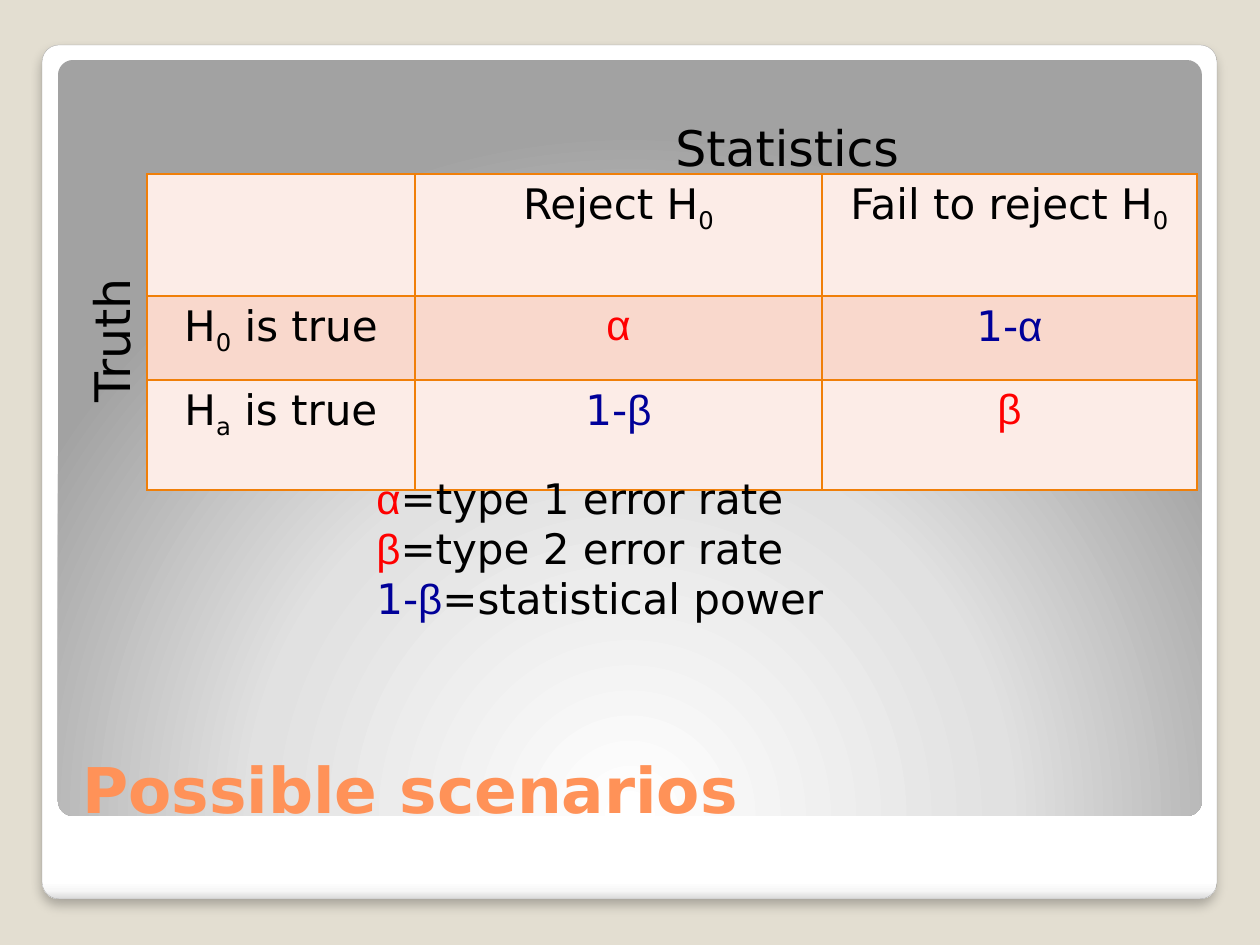
from lxml.etree import SubElement
from pptx import Presentation
from pptx.dml.color import RGBColor
from pptx.enum.shapes import MSO_SHAPE
from pptx.enum.text import MSO_ANCHOR, PP_ALIGN
from pptx.oxml.ns import qn
from pptx.util import Emu, Pt

SANS, GREEK = "DejaVu Sans", "Arial"
BLACK, RED, BLUE = "000000", "FF0000", "000099"
ORANGE, CORAL = "F07F09", "FF9258"
PALE, ROSE = "FCECE7", "F9D8CC"


def px(n):
    return Emu(round(n * 914400 / 126))


def color(code):
    return RGBColor.from_string(code)


def node(up, tag, **attrs):
    item = SubElement(up, qn(tag))
    for name, value in attrs.items():
        item.set(name, str(value))
    return item


def write(para, text, size=24, ink=BLACK, font=SANS, bold=False, sub=False):
    run = para.add_run()
    run.text = text
    face = run.font
    face.size, face.name, face.bold = Pt(size), font, bold
    face.color.rgb = color(ink)
    if sub:
        run._r.get_or_add_rPr().set("baseline", "-25000")


def fill_in(para, parts):
    for text, style in parts:
        write(para, text, **style)


class Deck:
    """Holds the slide and draws each kind of element on it."""

    def __init__(self, back):
        self.file = Presentation()
        self.file.slide_width, self.file.slide_height = px(1260), px(945)
        self.slide = self.file.slides.add_slide(self.file.slide_layouts[6])
        fill = self.slide.background.fill
        fill.solid()
        fill.fore_color.rgb = color(back)

    def panel(self, x, y, w, h, stops, line=None, round_in=False):
        shape = self.slide.shapes.add_shape(
            MSO_SHAPE.ROUNDED_RECTANGLE, px(x), px(y), px(w), px(h))
        shape.adjustments[0] = 0.02
        shape.shadow.inherit = False
        if line:
            shape.line.color.rgb = color(line)
            shape.line.width = Pt(0.16)
        else:
            shape.line.fill.background()
        props = shape._element.spPr
        grad = node(props, "a:gradFill", rotWithShape=1)
        props.insert(2, grad)
        group = node(grad, "a:gsLst")
        for spot, code in stops:
            stop = node(group, "a:gs", pos=spot * 1000)
            node(stop, "a:srgbClr", val=code)
        if round_in:
            way = node(grad, "a:path", path="circle")
            node(way, "a:fillToRect", l=50000, t=175000, r=50000, b=-75000)
        else:
            node(grad, "a:lin", ang=5400000, scaled=0)
        return shape

    def shade(self, shape):
        glow = shape._element.spPr.find(qn("a:effectLst"))
        cast = node(glow, "a:outerShdw", blurRad=Pt(6), dist=Pt(4),
                    dir=5400000, algn="t", rotWithShape=0)
        node(node(cast, "a:srgbClr", val=BLACK), "a:alpha", val=25000)

    def label(self, x, y, w, h, lines, turn=0, anchor=MSO_ANCHOR.TOP):
        box = self.slide.shapes.add_textbox(px(x), px(y), px(w), px(h))
        box.rotation = turn
        frame = box.text_frame
        frame.word_wrap = True
        frame.vertical_anchor = anchor
        for i, parts in enumerate(lines):
            para = frame.add_paragraph() if i else frame.paragraphs[0]
            fill_in(para, parts)

    def table(self, x, y, cols, rows, cells):
        grid = self.slide.shapes.add_table(
            len(rows), len(cols), px(x), px(y),
            px(sum(cols)), px(sum(rows))).table
        for col, w in zip(grid.columns, cols):
            col.width = px(w)
        for row, h in zip(grid.rows, rows):
            row.height = px(h)
        for r, line in enumerate(cells):
            for c, parts in enumerate(line):
                cell = grid.cell(r, c)
                self.border(cell)
                cell.fill.solid()
                cell.fill.fore_color.rgb = color(ROSE if r % 2 else PALE)
                para = cell.text_frame.paragraphs[0]
                para.alignment = PP_ALIGN.CENTER
                fill_in(para, parts)

    def border(self, cell):
        props = cell._tc.get_or_add_tcPr()
        for side in "LRTB":
            edge = node(props, "a:ln" + side, w=Pt(1))
            node(node(edge, "a:solidFill"), "a:srgbClr", val=ORANGE)


def main():
    deck = Deck("E3DED1")
    card = deck.panel(42, 45, 1175, 854, line="A4A4A4", stops=[
        (0, "FFFFFF"), (98, "FFFFFF"), (99, "F7F7F7"), (100, "DADADA")])
    deck.shade(card)
    deck.panel(58, 60, 1144, 756, round_in=True, stops=[
        (0, "FFFFFF"), (55, "E1E1E1"), (100, "A2A2A2")])

    title = dict(size=36, ink=CORAL, bold=True)
    deck.label(70, 687, 1127, 145, [[("Possible scenarios", title)]],
               anchor=MSO_ANCHOR.BOTTOM)

    plain, sub, head = {}, dict(sub=True), dict(size=28)
    alpha = ("α", dict(ink=RED, font=GREEK))
    beta = ("β", dict(ink=RED, font=GREEK))
    minus = ("1-", dict(ink=BLUE))
    right = [minus, ("α", dict(ink=BLUE, font=GREEK))]
    power = [minus, ("β", dict(ink=BLUE, font=GREEK))]
    zero, true = ("0", sub), (" is true", plain)
    deck.table(147, 174, [268, 407, 375], [122, 84, 110], [
        [[], [("Reject H", plain), zero], [("Fail to reject H", plain), zero]],
        [[("H", plain), zero, true], [alpha], right],
        [[("H", plain), ("a", sub), true], power, [beta]],
    ])

    deck.label(364, 466, 478, 217, [
        [alpha, ("=type 1 error rate", plain)],
        [beta, ("=type 2 error rate", plain)],
        power + [("=statistical power", plain)],
    ])
    deck.label(663, 111, 252, 72, [[("Statistics", head)]])
    deck.label(34, 302, 154, 72, [[("Truth", head)]], turn=270)
    deck.file.save("out.pptx")


if __name__ == "__main__":
    main()
